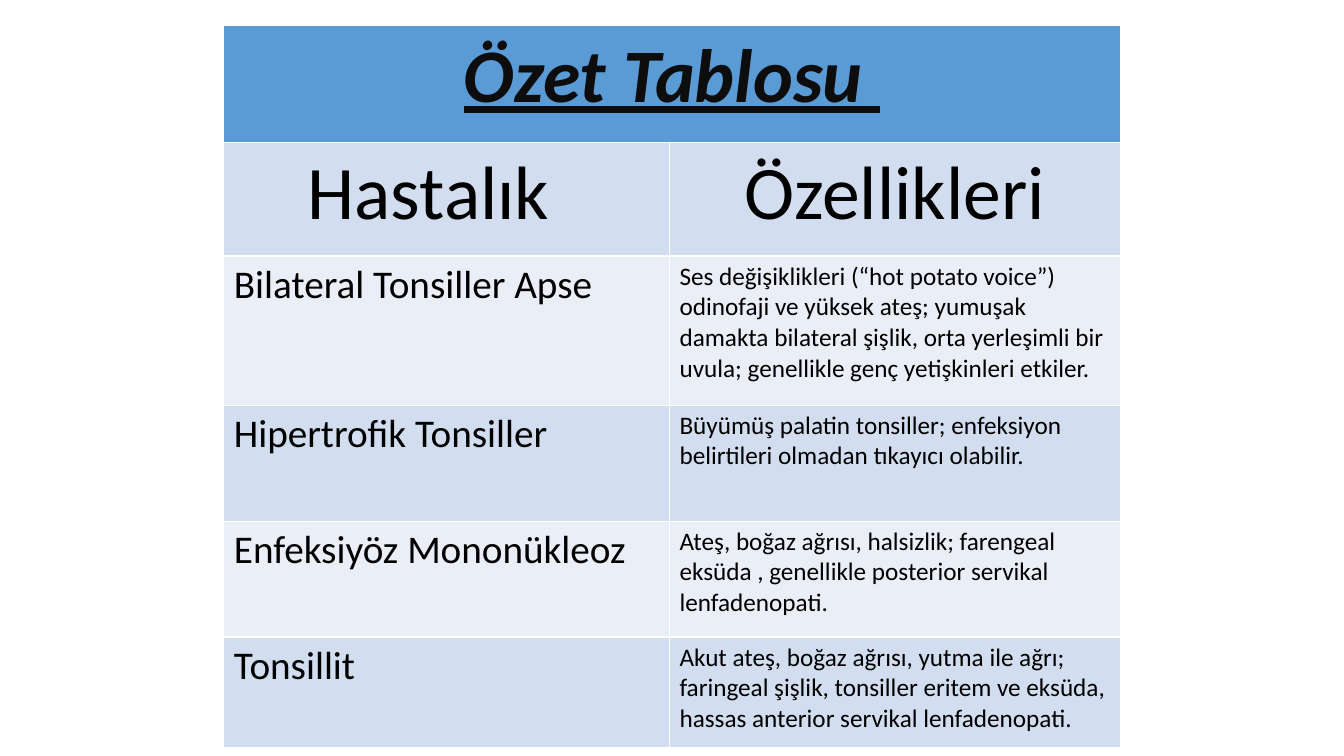
"""Build a one-slide summary table of tonsil diseases and their features."""
from pptx import Presentation
from pptx.dml.color import RGBColor
from pptx.enum.text import PP_ALIGN as Align
from pptx.util import Inches, Pt

HEADER, DARK_BAND, LIGHT_BAND = "5B9BD5", "D2DEEF", "EAEFF7"
TITLE_INK, INK = "0D0D0D", "000000"
COLUMN_WIDTHS = [4.42, 4.47]
ROW_HEIGHTS = [1.16, 1.13, 1.48, 1.15, 1.15, 1.1]
DISEASES = [
    ("Bilateral Tonsiller Apse",
     "Ses değişiklikleri (“hot potato voice”)\n"
     "odinofaji ve yüksek ateş; yumuşak damakta bilateral şişlik, orta yerleşimli "
     "bir uvula; genellikle genç yetişkinleri etkiler."),
    ("Hipertrofik Tonsiller",
     "Büyümüş palatin tonsiller; enfeksiyon belirtileri olmadan tıkayıcı olabilir."),
    ("Enfeksiyöz Mononükleoz",
     "Ateş, boğaz ağrısı, halsizlik; farengeal eksüda , genellikle posterior "
     "servikal lenfadenopati."),
    ("Tonsillit",
     "Akut ateş, boğaz ağrısı, yutma ile ağrı; faringeal şişlik, tonsiller eritem "
     "ve eksüda, hassas anterior servikal lenfadenopati."),
]


def color(hex_code):
    return RGBColor.from_string(hex_code)


def write(cell, text, size, fill, ink=INK, align=Align.LEFT, strong=False):
    cell.fill.solid()
    cell.fill.fore_color.rgb = color(fill)
    cell.text = text
    for para in cell.text_frame.paragraphs:
        para.alignment = align
        for span in para.runs:
            font = span.font
            font.name, font.size = "Calibri", Pt(size)
            font.bold = font.italic = font.underline = strong
            font.color.rgb = color(ink)


deck = Presentation()
deck.slide_width, deck.slide_height = Inches(13.33), Inches(7.5)
page = deck.slides.add_slide(deck.slide_layouts[6])

frame = page.shapes.add_table(
    len(ROW_HEIGHTS), len(COLUMN_WIDTHS), Inches(2.22), Inches(0.25),
    Inches(sum(COLUMN_WIDTHS)), Inches(sum(ROW_HEIGHTS)))
table = frame.table
for column, width in zip(table.columns, COLUMN_WIDTHS):
    column.width = Inches(width)
for row, height in zip(table.rows, ROW_HEIGHTS):
    row.height = Inches(height)

title = table.cell(0, 0)
title.merge(table.cell(0, 1))
write(title, "Özet Tablosu ", 54, HEADER, ink=TITLE_INK, align=Align.CENTER, strong=True)

for index, heading in enumerate(["Hastalık", "Özellikleri"]):
    write(table.cell(1, index), heading, 54, DARK_BAND, align=Align.CENTER)
table.cell(1, 0).margin_right = Inches(0.46)

for index, (disease, features) in enumerate(DISEASES, start=2):
    band = DARK_BAND if index % 2 else LIGHT_BAND
    write(table.cell(index, 0), disease, 28, band)
    write(table.cell(index, 1), features, 18, band)

deck.save("out.pptx")
